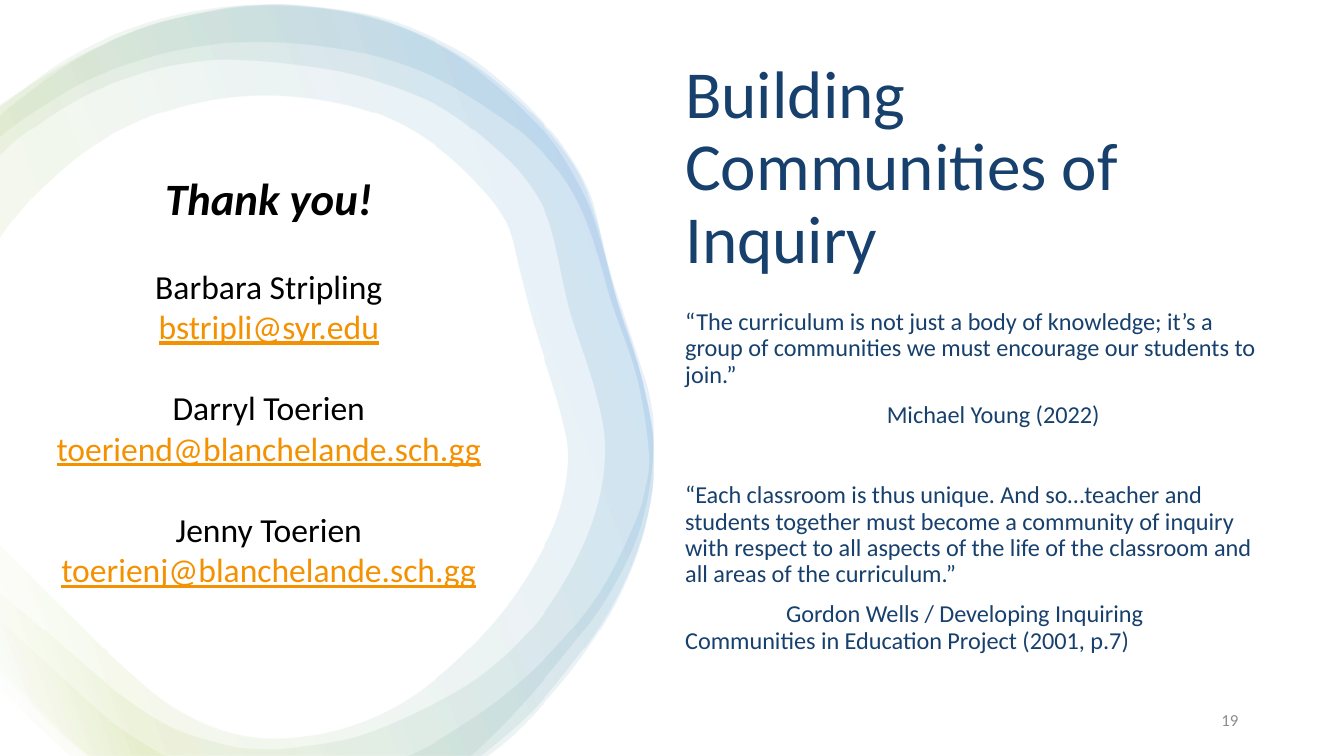
"""Build the closing slide: ring of translucent bands, contacts and two quotations."""
from lxml import etree
from pptx import Presentation
from pptx.dml.color import RGBColor
from pptx.enum.shapes import MSO_SHAPE
from pptx.enum.text import MSO_ANCHOR, PP_ALIGN
from pptx.oxml.ns import qn
from pptx.util import Pt

RECTANGLE = MSO_SHAPE.RECTANGLE
TOP, MIDDLE = MSO_ANCHOR.TOP, MSO_ANCHOR.MIDDLE
LEFT, CENTER, RIGHT = PP_ALIGN.LEFT, PP_ALIGN.CENTER, PP_ALIGN.RIGHT
WIDTH, HEIGHT = 720, 405
FONT = "Calibri"
NAVY, ORANGE, BLACK, GRAY, WHITE = "17406D", "F49100", "000000", "8C8C8C", "FFFFFF"
GRADIENT_STOPS = [(2, WHITE), (16, "A5C249"), (85, "0F6FC6"), (100, WHITE)]
GRADIENT_ANGLE, OPACITY = 340, 10
CURVE_STEPS = 6

TITLE = "Building Communities of Inquiry"
QUOTES = [
    ("“The curriculum is not just a body of knowledge; it’s a group of communities "
     "we must encourage our students to join.”", 0, 0),
    ("Michael Young (2022)", 108, 7.5),
    ("“Each classroom is thus unique. And so…teacher and students together must become "
     "a community of inquiry with respect to all aspects of the life of the classroom "
     "and all areas of the curriculum.”", 0, 29),
    ("Gordon Wells / Developing Inquiring Communities in Education Project (2001, p.7)",
     54, 7.5),
]
THANKS = "Thank you!"
CONTACTS = [
    ("Barbara Stripling", "bstripli@syr.edu"),
    ("Darryl Toerien", "toeriend@blanchelande.sch.gg"),
    ("Jenny Toerien", "toerienj@blanchelande.sch.gg"),
]
PAGE_NUMBER = "19"

WAVY_BAND = [[
    [(0, 56), (37, 33), (74, 16), (104, 8), (135, 3.6), (156, 3.2), (199, 9.4), (238, 26),
     (264, 44.6), (287, 66), (300, 82), (314, 107), (321, 127), (328, 150.5), (343, 196),
     (348.5, 217), (350, 239), (343, 282), (325, 320), (300, 353.5), (273, 384.5), (252, 405)],
    [(38, 405), (19, 388), (0, 369)],
    [(0, 317.5), (18, 332.6), (33, 345.6), (61, 369.4), (91, 389), (122, 399), (141, 401),
     (156, 400.3), (190, 394.6), (222.5, 381.6), (255, 363.6), (283, 338.4), (304.6, 307.4),
     (319, 274), (324, 239), (317.5, 205), (305, 166), (296.6, 128), (291, 111.6),
     (281.5, 96.5), (269, 83), (246, 64), (224.6, 52), (190, 40.3), (155, 34.6), (127, 32.4),
     (108, 33), (80.6, 38), (46, 51), (14.4, 71), (0, 83.5)],
]]
WIDE_BAND = [[
    [(0, 57), (33, 33), (66, 16.7), (102.6, 6.4), (141, 3), (184, 6.5), (222, 17.5),
     (256, 36.3), (287, 63.4), (308.6, 91), (319, 117.4), (327.5, 152), (343, 202),
     (350, 247), (342.6, 290), (325, 329), (301, 362), (281.5, 384), (257, 405)],
    [(48, 405), (35, 394), (6, 364), (0, 358.6)],
    [(0, 292), (13.7, 306), (38, 330), (64.7, 356), (90, 377), (117, 390.4), (146, 395.3),
     (180, 391), (211, 378.7), (239, 358.6), (266.4, 330.5), (286, 302), (299, 274),
     (304, 245.5), (299.5, 219), (286.6, 177.6), (278.6, 147.6), (270.7, 119), (254, 97),
     (230.5, 76.3), (204.4, 62), (175, 54), (141, 51), (107, 54.6), (75, 64.7), (45.6, 81),
     (19.4, 103.7), (8, 116.6), (0, 127.4)],
]]
SLIM_BAND = [
    [
        [(0, 62.6), (7, 56), (41, 31.7), (79, 14.6), (120, 5), (141, 3), (163, 3.6),
         (204.5, 10), (244, 26.6), (270, 45.4), (292, 67), (305, 84), (315.4, 103),
         (321, 123), (330.5, 162.7), (343, 201.6), (350, 242), (345, 283), (330, 322),
         (307.4, 357), (279.4, 389), (260.6, 405)],
        [(217.4, 405), (234.7, 396), (267, 374.4), (296, 348), (321, 317), (339, 281.5),
         (345, 262), (347, 242), (340.6, 202), (327.6, 163.4), (322, 144), (316, 124.6),
         (308, 106), (297.4, 90), (283.7, 75.6), (268.6, 63.4), (235.4, 43), (199.4, 30),
         (161, 24), (132, 23), (112, 24.5), (83.5, 30), (47, 43), (13, 63.4), (0, 74)],
    ],
    [
        [(0, 361), (13.7, 374.4), (28, 389), (47, 405)],
        [(89, 405), (82, 401), (58, 385), (29, 359), (13.7, 345), (0, 332.6)],
    ],
]


def color(value):
    return RGBColor.from_string(value)


def smooth(points):
    """Return points along a Catmull-Rom curve through the given points."""
    padded = [points[0], *points, points[-1]]
    curve = [points[0]]
    for a, b, c, d in zip(padded, padded[1:], padded[2:], padded[3:]):
        for step in range(1, CURVE_STEPS + 1):
            t = step / CURVE_STEPS
            curve.append(tuple(
                q + t * ((r - p) + t * ((2 * p - 5 * q + 4 * r - s)
                                        + t * (3 * q - p - 3 * r + s))) / 2
                for p, q, r, s in zip(a, b, c, d)))
    return curve


def add_band(page, pieces):
    """Draw one translucent gradient band made of closed pieces."""
    builder = None
    for edges in pieces:
        outline = [(Pt(x), Pt(y)) for edge in edges for x, y in smooth(edge)]
        if builder is None:
            builder = page.shapes.build_freeform(*outline[0], scale=1.0)
        else:
            builder.move_to(*outline[0])
        builder.add_line_segments(outline[1:], close=True)
    band = builder.convert_to_shape()
    band.shadow.inherit = False
    band.line.fill.background()
    band.fill.gradient()
    gradient = band._element.spPr.find(qn("a:gradFill"))
    stops = gradient.find(qn("a:gsLst"))
    for stop in list(stops):
        stops.remove(stop)
    for position, value in GRADIENT_STOPS:
        stop = etree.SubElement(stops, qn("a:gs"), pos=str(position * 1000))
        tint = etree.SubElement(stop, qn("a:srgbClr"), val=value)
        etree.SubElement(tint, qn("a:alpha"), val=str(OPACITY * 1000))
    gradient.find(qn("a:lin")).set("ang", str(GRADIENT_ANGLE * 60000))


def add_box(page, left, top, width, height, anchor):
    """Add a wrapping text box and return its text frame."""
    frame = page.shapes.add_textbox(Pt(left), Pt(top), Pt(width), Pt(height)).text_frame
    frame.word_wrap = True
    frame.vertical_anchor = anchor
    return frame


def add_text(frame, text, size, value, align=LEFT, before=0, spacing=1.0):
    """Fill the empty first paragraph or a new one, and return paragraph and run."""
    para = frame.paragraphs[0]
    if para.runs:
        para = frame.add_paragraph()
    para.alignment = align
    para.line_spacing = spacing
    if before:
        para.space_before = Pt(before)
    span = para.add_run()
    span.text = text
    span.font.name = FONT
    span.font.size = Pt(size)
    span.font.color.rgb = color(value)
    return para, span


def main():
    """Assemble and save the slide."""
    deck = Presentation()
    deck.slide_width, deck.slide_height = Pt(WIDTH), Pt(HEIGHT)
    page = deck.slides.add_slide(deck.slide_layouts[6])

    backdrop = page.shapes.add_shape(RECTANGLE, 0, 0, Pt(WIDTH), Pt(HEIGHT))
    backdrop.shadow.inherit = False
    backdrop.fill.solid()
    backdrop.fill.fore_color.rgb = color(WHITE)
    backdrop.line.fill.background()
    for band in (WAVY_BAND, WIDE_BAND, SLIM_BAND):
        add_band(page, band)

    title = add_box(page, 360, 47.5, 294, 86, MIDDLE)
    add_text(title, TITLE, 36, NAVY, spacing=0.9)

    quotes = add_box(page, 360, 158.5, 325.5, 199.5, MIDDLE)
    for text, indent, before in QUOTES:
        para, _ = add_text(quotes, text, 13, NAVY, before=before, spacing=0.9)
        para._p.get_or_add_pPr().set("indent", str(Pt(indent)))

    contacts = add_box(page, 22.3, 88, 243.4, 232.5, TOP)
    _, thanks = add_text(contacts, THANKS, 24, BLACK, CENTER)
    thanks.font.bold = thanks.font.italic = True
    for name, email in CONTACTS:
        add_text(contacts, name, 18, BLACK, CENTER, before=22)
        _, address = add_text(contacts, email, 18, ORANGE, CENTER)
        address.font.underline = True

    number = add_box(page, 508.5, 375, 162, 21.5, MIDDLE)
    add_text(number, PAGE_NUMBER, 9, GRAY, RIGHT)
    deck.save("out.pptx")


if __name__ == "__main__":
    main()
